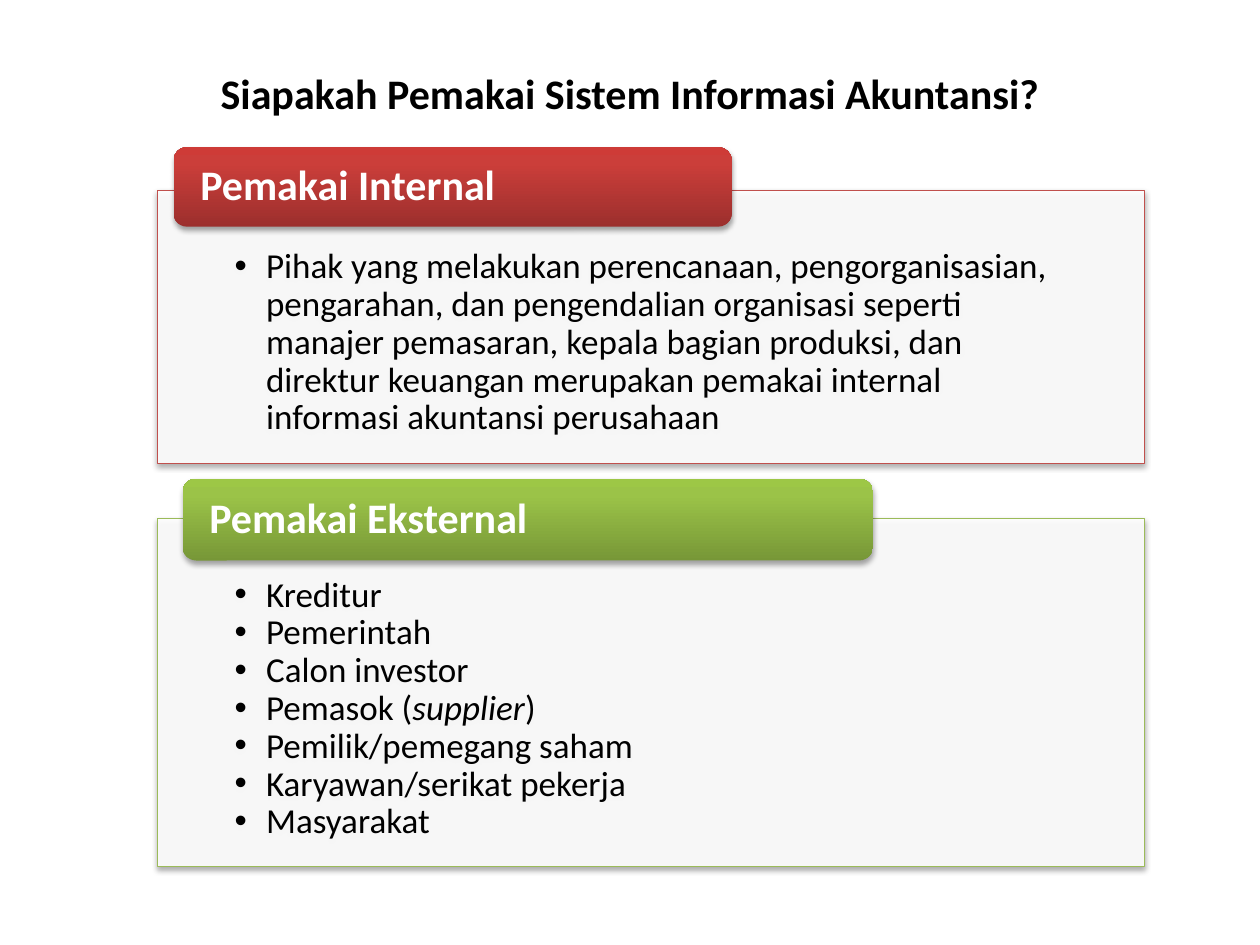
from lxml import etree
from pptx import Presentation
from pptx.dml.color import RGBColor
from pptx.enum import shapes, text
from pptx.oxml import parse_xml
from pptx.oxml.ns import nsdecls, qn
from pptx.util import Cm, Pt

BLACK = RGBColor(0x00, 0x00, 0x00)
WHITE = RGBColor(0xFF, 0xFF, 0xFF)
RED = RGBColor(0xC0, 0x50, 0x4D)
GREEN = RGBColor(0x9B, 0xBB, 0x59)
RED_STOPS = [(0, RGBColor(0x9C, 0x2F, 0x2D)), (80, RGBColor(0xCB, 0x3E, 0x3A)),
             (100, RGBColor(0xCE, 0x3B, 0x37))]
GREEN_STOPS = [(0, RGBColor(0x77, 0x97, 0x37)), (80, RGBColor(0x9B, 0xC3, 0x48)),
               (100, RGBColor(0x9D, 0xC7, 0x46))]

FONT = "Calibri"
PANEL_LEFT, PANEL_WIDTH = 3.18, 19.89

INTERNAL = [
    "Pihak yang melakukan perencanaan, pengorganisasian, pengarahan, dan "
    "pengendalian organisasi seperti manajer pemasaran, kepala bagian produksi, "
    "dan direktur keuangan merupakan pemakai internal informasi akuntansi perusahaan",
]
# A paragraph is a string, or a list of (text, italic) runs
EXTERNAL = [
    "Kreditur",
    "Pemerintah",
    "Calon investor",
    [("Pemasok (", False), ("supplier", True), (")", False)],
    "Pemilik/pemegang saham",
    "Karyawan/serikat pekerja",
    "Masyarakat",
]


def set_frame(tf, anchor, insets):
    tf.word_wrap = True
    tf.vertical_anchor = anchor
    tf.margin_left, tf.margin_top, tf.margin_right, tf.margin_bottom = map(Cm, insets)


def write(p, content, size=20, color=BLACK, bold=False, align=text.PP_ALIGN.LEFT,
          spacing=0.9, bullet=False):
    p.alignment = align
    p.line_spacing = spacing
    runs = [(content, False)] if isinstance(content, str) else content
    for words, italic in runs:
        r = p.add_run()
        r.text = words
        r.font.name, r.font.size, r.font.bold = FONT, Pt(size), bold
        r.font.italic = italic
        r.font.color.rgb = color
    if bullet:
        pPr = p._p.get_or_add_pPr()
        pPr.set("marL", str(Cm(0.635)))
        pPr.set("indent", str(-Cm(0.635)))
        etree.SubElement(pPr, qn("a:buFont")).set("typeface", "Arial")
        etree.SubElement(pPr, qn("a:buChar")).set("char", "•")


def add_block(s, kind, box):
    """Add a preset shape with a soft shadow below it."""
    sp = s.shapes.add_shape(kind, *map(Cm, box))
    sp.shadow.inherit = False
    sp._element.spPr.find(qn("a:effectLst")).append(parse_xml(
        f'<a:outerShdw {nsdecls("a")} blurRad="{Pt(3.1)}" dist="{Pt(1.8)}" '
        'dir="5400000" rotWithShape="0"><a:srgbClr val="000000">'
        '<a:alpha val="35000"/></a:srgbClr></a:outerShdw>'))
    return sp


def add_panel(s, top, height, color, items):
    sp = add_block(s, shapes.MSO_SHAPE.RECTANGLE,
                   (PANEL_LEFT, top, PANEL_WIDTH, height))
    sp.fill.solid()
    sp.fill.fore_color.rgb = WHITE
    clr = sp._element.spPr.find(qn("a:solidFill"))[0]
    etree.SubElement(clr, qn("a:alpha")).set("val", "90000")
    sp.line.color.rgb = color
    sp.line.width = Pt(0.75)
    tf = sp.text_frame
    set_frame(tf, text.MSO_ANCHOR.TOP, (1.55, 1.17, 1.55, 0.41))
    for i, item in enumerate(items):
        p = tf.add_paragraph() if i else tf.paragraphs[0]
        write(p, item, bullet=True)


def add_tab(s, box, stops, label):
    sp = add_block(s, shapes.MSO_SHAPE.ROUNDED_RECTANGLE, box)
    sp.line.fill.background()
    # Three-stop gradient running from bottom to top
    sp.fill.gradient()
    sp.fill.gradient_angle = 90
    gs_list = sp._element.spPr.find(qn("a:gradFill")).find(qn("a:gsLst"))
    for gs in list(gs_list):
        gs_list.remove(gs)
    for pos, color in stops:
        gs = etree.SubElement(gs_list, qn("a:gs"))
        gs.set("pos", str(pos * 1000))
        etree.SubElement(gs, qn("a:srgbClr")).set("val", str(color))
    set_frame(sp.text_frame, text.MSO_ANCHOR.MIDDLE, (0.46, 0, 0.46, 0))
    write(sp.text_frame.paragraphs[0], label, size=24, color=WHITE, bold=True)


def add_title(s, words):
    sp = s.shapes.add_textbox(Cm(1.27), Cm(0.76), Cm(22.86), Cm(2.21))
    set_frame(sp.text_frame, text.MSO_ANCHOR.MIDDLE, (0.25, 0.13, 0.25, 0.13))
    write(sp.text_frame.paragraphs[0], words, size=24, bold=True,
          align=text.PP_ALIGN.CENTER, spacing=1.0)


def main():
    prs = Presentation()
    prs.slide_width, prs.slide_height = Cm(25.4), Cm(19.05)
    s = prs.slides.add_slide(prs.slide_layouts[6])

    add_title(s, "Siapakah Pemakai Sistem Informasi Akuntansi?")

    # Internal users
    add_panel(s, 3.84, 5.51, RED, INTERNAL)
    add_tab(s, (3.5, 2.97, 11.25, 1.6), RED_STOPS, "Pemakai Internal")

    # External users
    add_panel(s, 10.46, 7.01, GREEN, EXTERNAL)
    add_tab(s, (3.68, 9.65, 13.92, 1.65), GREEN_STOPS, "Pemakai Eksternal")

    prs.save("out.pptx")


if __name__ == "__main__":
    main()
